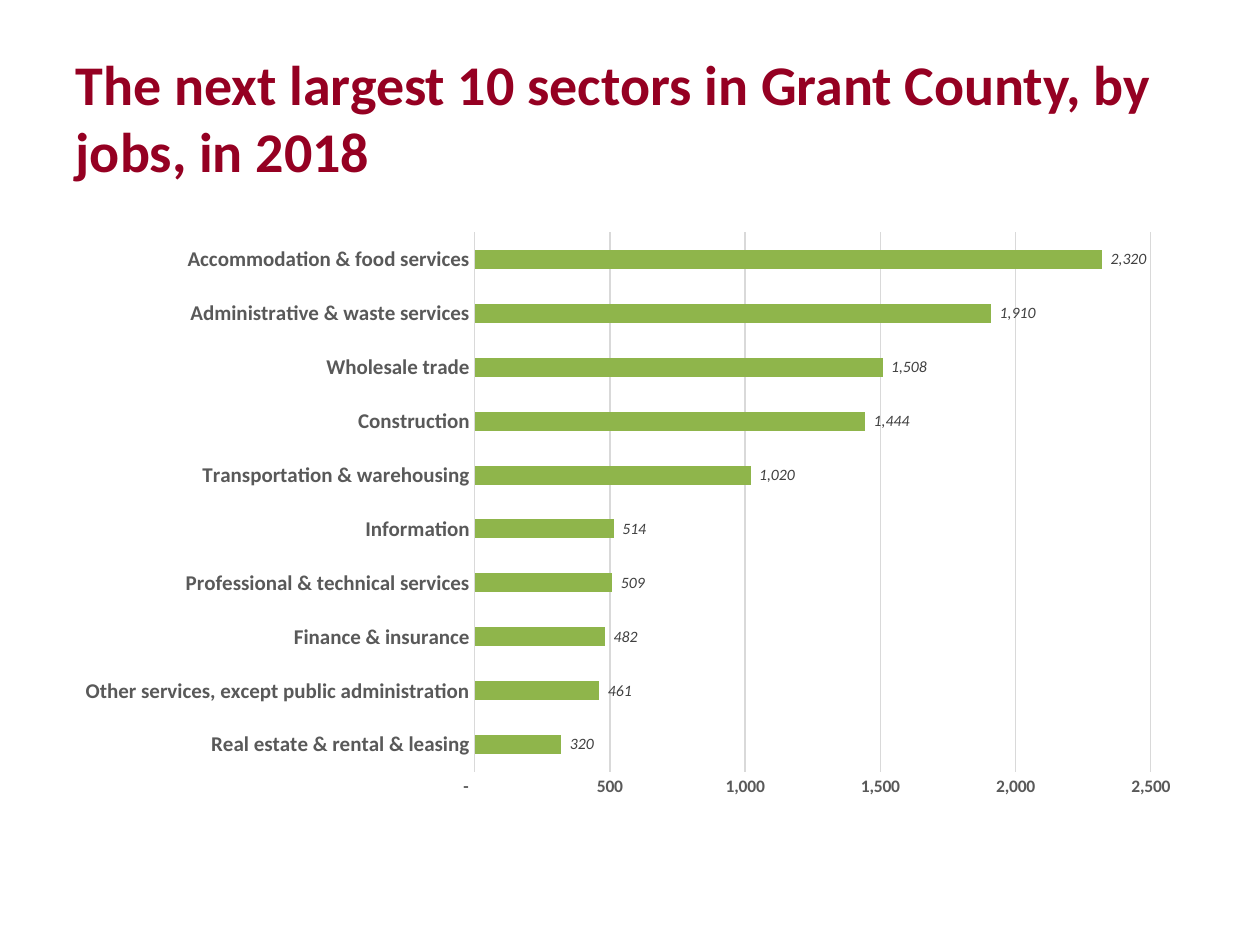
from pptx import Presentation
from pptx.chart.data import CategoryChartData
from pptx.dml.color import RGBColor
from pptx.enum.chart import XL_CHART_TYPE, XL_LABEL_POSITION, XL_TICK_MARK
from pptx.enum.text import MSO_ANCHOR, PP_ALIGN
from pptx.util import Cm, Pt

BAR_CLUSTERED = XL_CHART_TYPE.BAR_CLUSTERED
OUTSIDE_END = XL_LABEL_POSITION.OUTSIDE_END
NO_TICK = XL_TICK_MARK.NONE
MIDDLE = MSO_ANCHOR.MIDDLE
LEFT = PP_ALIGN.LEFT

CRIMSON = RGBColor(0x95, 0x00, 0x22)
GREEN = RGBColor(0x8F, 0xB5, 0x4B)
AXIS_GREY = RGBColor(0x59, 0x59, 0x59)
LABEL_GREY = RGBColor(0x40, 0x40, 0x40)
GRID_GREY = RGBColor(0xD9, 0xD9, 0xD9)
BLACK = RGBColor(0, 0, 0)

FONT = "Calibri"
JOBS_FORMAT = r'_(* #,##0_);_(* \(#,##0\);_(* "-"??_);_(@_)'
TITLE_TEXT = "The next largest 10 sectors in Grant County, by jobs, in 2018"
JOBS_BY_SECTOR = {
    "Real estate & rental & leasing": 320,
    "Other services, except public administration": 461,
    "Finance & insurance": 482,
    "Professional & technical services": 509,
    "Information": 514,
    "Transportation & warehousing": 1020,
    "Construction": 1444,
    "Wholesale trade": 1508,
    "Administrative & waste services": 1910,
    "Accommodation & food services": 2320,
}


def style_font(font, size, color, bold=False, italic=False):
    font.name = FONT
    font.size = Pt(size)
    font.color.rgb = color
    font.bold = bold
    font.italic = italic


def style_line(line):
    line.color.rgb = GRID_GREY
    line.width = Pt(0.75)


def set_title(slide):
    title = slide.shapes.title
    title.left, title.top = Cm(1.27), Cm(0.76)
    title.width, title.height = Cm(22.86), Cm(3.18)
    frame = title.text_frame
    frame.text = TITLE_TEXT
    frame.word_wrap = True
    frame.vertical_anchor = MIDDLE
    heading = frame.paragraphs[0]
    heading.alignment = LEFT
    style_font(heading.font, 32, CRIMSON, bold=True)


def style_axes(chart):
    sectors, jobs = chart.category_axis, chart.value_axis
    for axis, size in ((sectors, 12), (jobs, 10)):
        axis.major_tick_mark = axis.minor_tick_mark = NO_TICK
        style_font(axis.tick_labels.font, size, AXIS_GREY, bold=True)
    style_line(sectors.format.line)
    sectors.has_major_gridlines = False

    jobs.minimum_scale, jobs.maximum_scale, jobs.major_unit = 0, 2500, 500
    jobs.format.line.fill.background()
    jobs.has_major_gridlines = True
    style_line(jobs.major_gridlines.format.line)
    jobs.tick_labels.number_format = JOBS_FORMAT
    jobs.tick_labels.number_format_is_linked = False


def style_bars(plot):
    plot.gap_width = 182
    plot.vary_by_categories = False
    bars = plot.series[0]
    bars.format.fill.solid()
    bars.format.fill.fore_color.rgb = GREEN
    labels = bars.data_labels
    labels.show_value = True
    labels.position = OUTSIDE_END
    labels.number_format = JOBS_FORMAT
    labels.number_format_is_linked = False
    style_font(labels.font, 9, LABEL_GREY, italic=True)


def add_jobs_chart(slide):
    data = CategoryChartData(number_format=JOBS_FORMAT)
    data.categories = list(JOBS_BY_SECTOR)
    data.add_series("Series 1", list(JOBS_BY_SECTOR.values()))
    chart = slide.shapes.add_chart(
        BAR_CLUSTERED, Cm(1.27), Cm(4.45), Cm(22.86), Cm(11.84), data
    ).chart
    chart.has_title = False
    chart.has_legend = False
    style_font(chart.font, 10, BLACK)
    style_axes(chart)
    style_bars(chart.plots[0])


def main():
    deck = Presentation()
    deck.slide_width, deck.slide_height = Cm(25.4), Cm(19.05)
    title_only = deck.slide_layouts[5]
    slide = deck.slides.add_slide(title_only)
    set_title(slide)
    add_jobs_chart(slide)
    deck.save("out.pptx")


if __name__ == "__main__":
    main()
